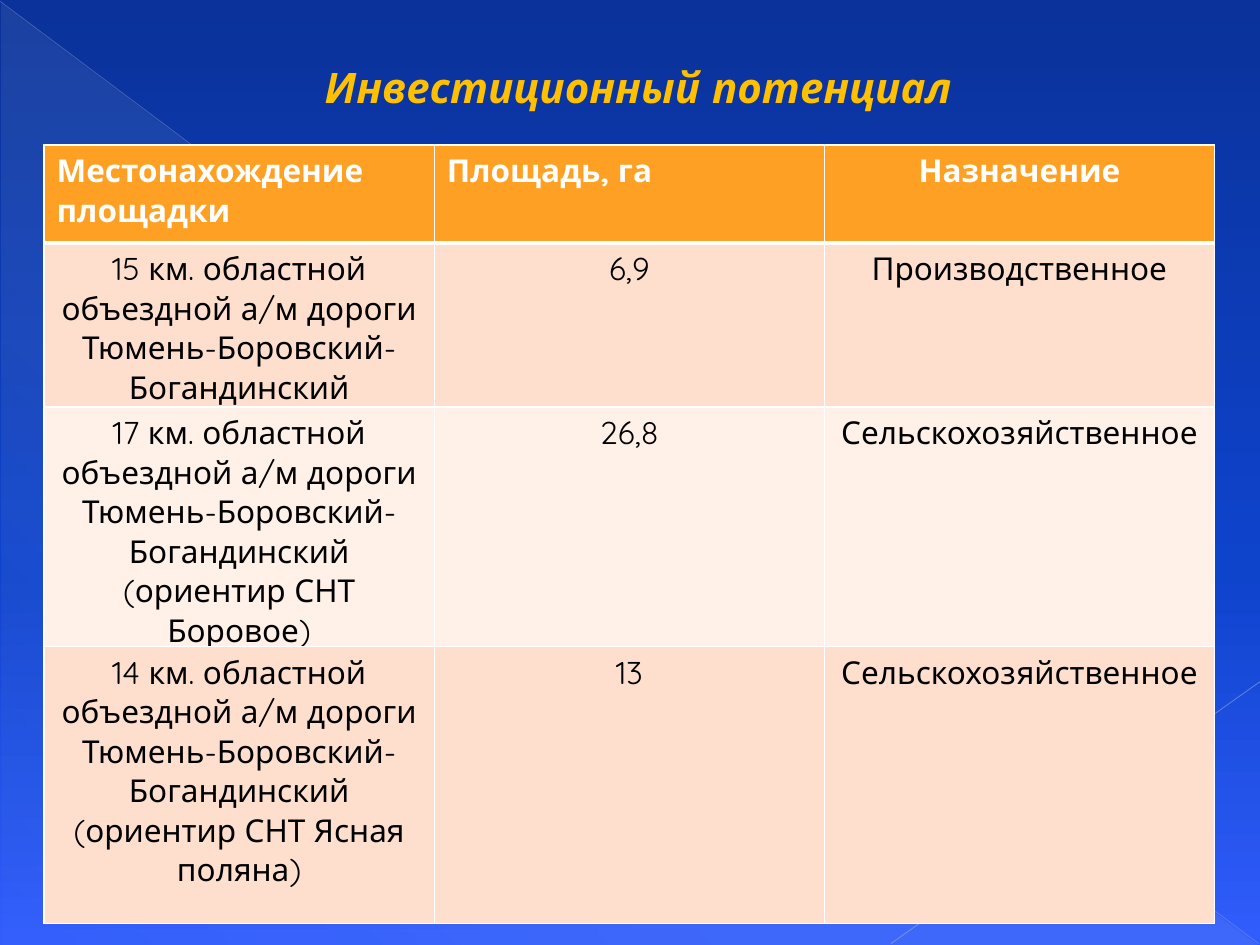
from dataclasses import dataclass

from lxml import etree
from pptx import Presentation, util as u
from pptx.dml.color import RGBColor
from pptx.enum import shapes, text
from pptx.oxml import ns


@dataclass(frozen=True)
class Theme:
    font: str = "Quicksand"
    title_size: int = 24
    table_size: int = 18
    title: str = "FFC000"
    header: str = "FDA023"
    bands: tuple = ("FEDFCD", "FFF0E8")
    white: str = "FFFFFF"
    black: str = "000000"
    # Gradient stops: position, colour, opacity in percent
    back: tuple = ((0, "0A329A", 100), (60, "0E43CC", 100), (100, "315DFC", 100))
    veil: tuple = ((0, "CCDDEA", 10), (70, "CCDDEA", 8), (100, "CCDDEA", 1))


class Deck:
    COLS, ROWS = 100, 75

    def __init__(self, theme):
        self.theme = theme
        self.prs = Presentation()
        self.prs.slide_width, self.prs.slide_height = u.Inches(10), u.Inches(7.5)
        self.s = self.prs.slides.add_slide(self.prs.slide_layouts[6])

    def x(self, cols):
        return u.Emu(round(self.prs.slide_width * cols / self.COLS))

    def y(self, rows):
        return u.Emu(round(self.prs.slide_height * rows / self.ROWS))

    def box(self, left, top, width, height):
        return self.x(left), self.y(top), self.x(width), self.y(height)

    def add(self, parent, tag, **attrs):
        return etree.SubElement(parent, ns.qn(tag), {k: str(v) for k, v in attrs.items()})

    def color(self, parent, rgb, opacity=100):
        clr = self.add(parent, "a:srgbClr", val=rgb)
        if opacity < 100:
            self.add(clr, "a:alpha", val=opacity * 1000)

    def gradient(self, fill, parent, stops, angle):
        fill.gradient()
        grad = parent.find(ns.qn("a:gradFill"))
        for child in list(grad):
            grad.remove(child)
        stop_list = self.add(grad, "a:gsLst")
        for pos, rgb, opacity in stops:
            self.color(self.add(stop_list, "a:gs", pos=pos * 1000), rgb, opacity)
        self.add(grad, "a:lin", ang=angle * 60000, scaled=0)

    def background(self):
        fill = self.s.background.fill
        fill.solid()
        props = self.s.element.find(".//" + ns.qn("p:bgPr"))
        self.gradient(fill, props, self.theme.back, 90)

    def triangle(self, *area):
        sp = self.s.shapes.add_shape(shapes.MSO_SHAPE.RIGHT_TRIANGLE, *self.box(*area))
        sp.shadow.inherit = False
        sp.line.fill.background()
        self.gradient(sp.fill, sp.element.spPr, self.theme.veil, 133)

    def line(self, x1, y1, x2, y2, rgb, width, opacity):
        cn = self.s.shapes.add_connector(
            shapes.MSO_CONNECTOR.STRAIGHT, self.x(x1), self.y(y1), self.x(x2), self.y(y2))
        cn.line.width = u.Pt(width)
        cn.line.color.rgb = RGBColor.from_string(rgb)
        clr = cn.element.spPr.find(".//" + ns.qn("a:srgbClr"))
        self.add(clr, "a:alpha", val=opacity * 1000)
        self.add(cn.element.spPr, "a:effectLst")

    def add_text(self, tf, words, size, rgb, bold=False, italic=False, centred=True):
        p = tf.paragraphs[0]
        p.alignment = text.PP_ALIGN.CENTER if centred else text.PP_ALIGN.LEFT
        r = p.add_run()
        r.text = words
        r.font.name, r.font.size = self.theme.font, u.Pt(size)
        r.font.bold, r.font.italic = bold, italic
        r.font.color.rgb = RGBColor.from_string(rgb)

    def title(self, words, *area):
        tf = self.s.shapes.add_textbox(*self.box(*area)).text_frame
        tf.word_wrap = True
        tf.auto_size = text.MSO_AUTO_SIZE.SHAPE_TO_FIT_TEXT
        self.add_text(tf, words, self.theme.title_size, self.theme.title, True, True)

    def borders(self, cell, top, bottom):
        props = cell._tc.get_or_add_tcPr()
        for i, (side, width) in enumerate(zip("LRTB", (1, 1, top, bottom))):
            ln = etree.Element(ns.qn(f"a:ln{side}"), w=str(int(u.Pt(width))))
            self.color(self.add(ln, "a:solidFill"), self.theme.white)
            props.insert(i, ln)

    def table(self, rows, heights, left_heads, left, top, width):
        t = self.theme
        frame = self.s.shapes.add_table(
            len(rows), len(rows[0]), *self.box(left, top, width, sum(heights)))
        table = frame.table
        table.horz_banding = False
        for i, (row, height) in enumerate(zip(rows, heights)):
            table.rows[i].height = self.y(height)
            head = i == 0
            for j, words in enumerate(row):
                cell = table.cell(i, j)
                cell.margin_bottom = 0
                cell.fill.solid()
                cell.fill.fore_color.rgb = RGBColor.from_string(
                    t.header if head else t.bands[(i - 1) % 2])
                self.borders(cell, 3 if i == 1 else 1, 3 if head else 1)
                self.add_text(cell.text_frame, words, t.table_size,
                              t.white if head else t.black, bold=head,
                              centred=not (head and j < left_heads))


def main():
    deck = Deck(Theme())

    # Backdrop
    deck.background()
    deck.triangle(0.1, 0.2, 99.8, 74.8)
    deck.line(0, 0.1, 99.9, 74.9, "ADB6DC", 0.39, 35)
    deck.line(100, 54.1, 70.7, 74.9, "B7BEDF", 0.47, 45)

    # Title
    deck.title("Инвестиционный потенциал", 16, 4.4, 69.3, 5)

    # Investment sites
    road = "км. областной объездной а/м дороги Тюмень-Боровский-Богандинский"
    rows = [
        ("Местонахождение площадки", "Площадь, га", "Назначение"),
        (f"15 {road}", "6,9", "Производственное"),
        (f"17 {road} (ориентир СНТ Боровое)", "26,8", "Сельскохозяйственное"),
        (f"14 {road} (ориентир СНТ Ясная поляна)", "13", "Сельскохозяйственное"),
    ]
    deck.table(rows, (7.8, 13, 19, 22), 2, 3.5, 11.5, 92.9)

    deck.prs.save("out.pptx")


if __name__ == "__main__":
    main()
